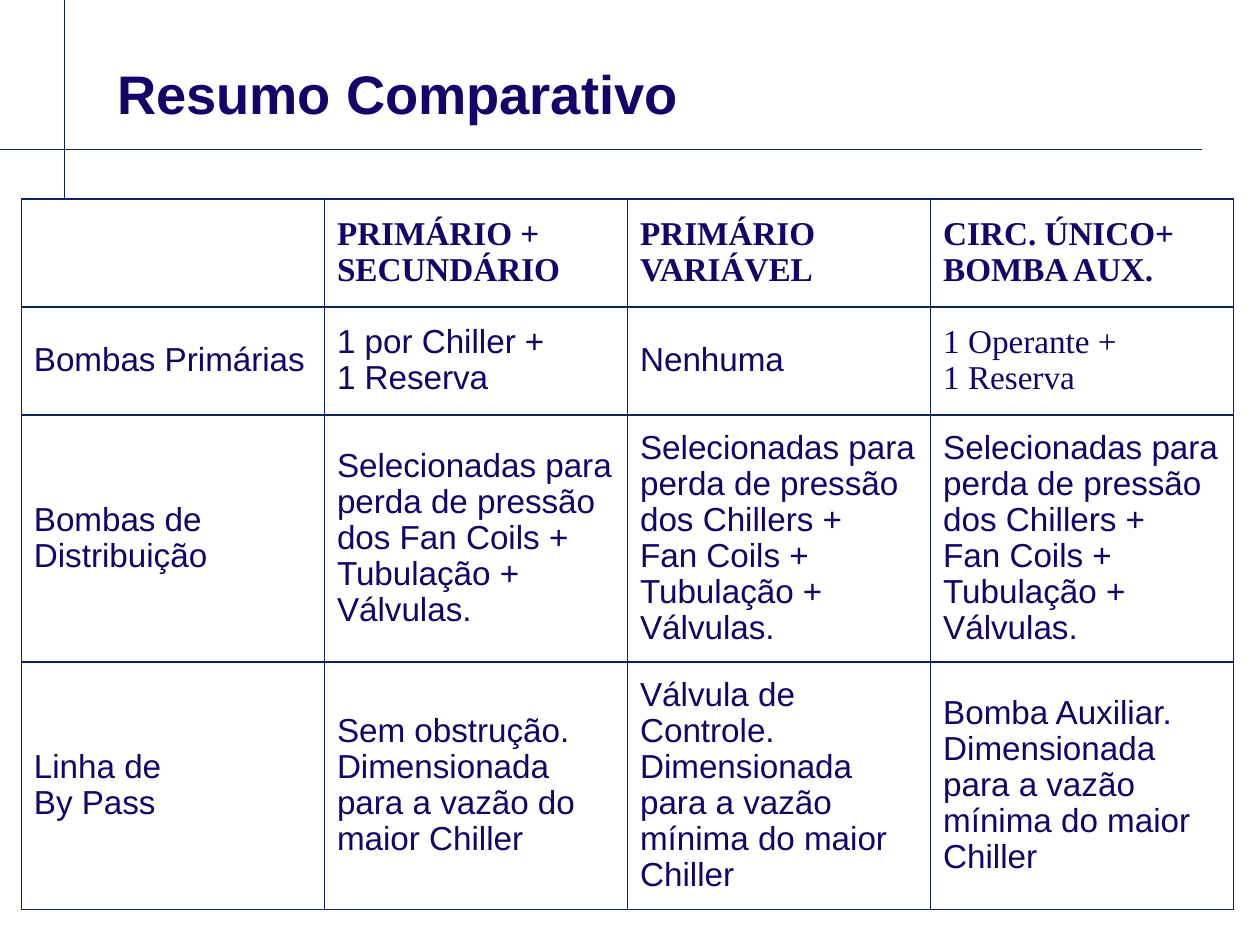
from lxml import etree
from pptx import Presentation
from pptx import util as u
from pptx.dml.color import RGBColor
from pptx.enum import shapes, text
from pptx.oxml import ns

COLORS = {"text": "13046A", "line": "0F245F", "cell": "FFFFFF"}
SANS, SERIF = "Arial", "Times New Roman"
COLUMN_WIDTH = 6.11
ROW_HEIGHTS = [2.18, 2.18, 4.98, 4.98]
DISTRIBUTION = "Selecionadas para perda de pressão dos Chillers +\nFan Coils + Tubulação + Válvulas."
MINIMUM_FLOW = "Dimensionada para a vazão mínima do maior Chiller"
ROWS = [
    ["", "PRIMÁRIO + SECUNDÁRIO", "PRIMÁRIO VARIÁVEL", "CIRC. ÚNICO+ BOMBA AUX."],
    ["Bombas Primárias", "1 por Chiller +\n1 Reserva", "Nenhuma", "1 Operante +\n1 Reserva"],
    ["Bombas de Distribuição",
     "Selecionadas para perda de pressão dos Fan Coils + Tubulação + Válvulas.",
     DISTRIBUTION, DISTRIBUTION],
    ["Linha de\nBy Pass",
     "Sem obstrução.\nDimensionada para a vazão do maior Chiller",
     f"Válvula de Controle.\n{MINIMUM_FLOW}", f"Bomba Auxiliar.\n{MINIMUM_FLOW}"],
]


def color(name):
    return RGBColor.from_string(COLORS[name])


def write(frame, content, size=19, font=SANS, bold=False, spacing=0.97,
          anchor=text.MSO_ANCHOR.MIDDLE):
    frame.text = content
    frame.word_wrap = True
    frame.vertical_anchor = anchor
    for para in frame.paragraphs:
        para.alignment = text.PP_ALIGN.LEFT
        para.line_spacing = spacing
        for span in para.runs:
            span.font.size = u.Pt(size)
            span.font.name = font
            span.font.bold = bold
            span.font.color.rgb = color("text")


def add_title(page, content):
    title = page.shapes.title
    title.left, title.top = u.Cm(2.11), u.Cm(0.64)
    title.width, title.height = u.Cm(18.11), u.Cm(2.01)
    write(title.text_frame, content, size=31, bold=True, spacing=0.85,
          anchor=text.MSO_ANCHOR.BOTTOM)


def add_rule(page, start, end):
    points = [u.Cm(value) for value in (*start, *end)]
    rule = page.shapes.add_connector(shapes.MSO_CONNECTOR.STRAIGHT, *points)
    rule.line.color.rgb = color("line")
    rule.line.width = u.Pt(0.75)
    etree.SubElement(rule._element.spPr, ns.qn("a:effectLst"))


def add_borders(cell):
    properties = cell._tc.get_or_add_tcPr()
    for side in ("lnL", "lnR", "lnT", "lnB"):
        border = etree.SubElement(properties, ns.qn(f"a:{side}"), w=str(u.Pt(1)))
        fill = etree.SubElement(border, ns.qn("a:solidFill"))
        etree.SubElement(fill, ns.qn("a:srgbClr"), val=COLORS["line"])


def add_comparison(page):
    count = len(ROWS[0])
    table = page.shapes.add_table(
        len(ROWS), count, u.Cm(0.43), u.Cm(4.01),
        u.Cm(COLUMN_WIDTH * count), u.Cm(sum(ROW_HEIGHTS))).table
    table.first_row = table.horz_banding = False
    for column in table.columns:
        column.width = u.Cm(COLUMN_WIDTH)
    for i, contents in enumerate(ROWS):
        table.rows[i].height = u.Cm(ROW_HEIGHTS[i])
        for j, content in enumerate(contents):
            cell = table.cell(i, j)
            add_borders(cell)
            cell.fill.solid()
            cell.fill.fore_color.rgb = color("cell")
            cell.vertical_anchor = text.MSO_ANCHOR.MIDDLE
            serif = i == 0 or (i, j) == (1, 3)
            write(cell.text_frame, content, font=SERIF if serif else SANS, bold=i == 0)


def main():
    deck = Presentation()
    deck.slide_width, deck.slide_height = u.Cm(25.4), u.Cm(19.05)
    page = deck.slides.add_slide(deck.slide_layouts[5])
    add_rule(page, (1.3, 16.81), (1.3, 0))
    add_rule(page, (0, 3.02), (24.23, 3.02))
    add_comparison(page)
    add_title(page, "Resumo Comparativo")
    deck.save("out.pptx")


if __name__ == "__main__":
    main()
